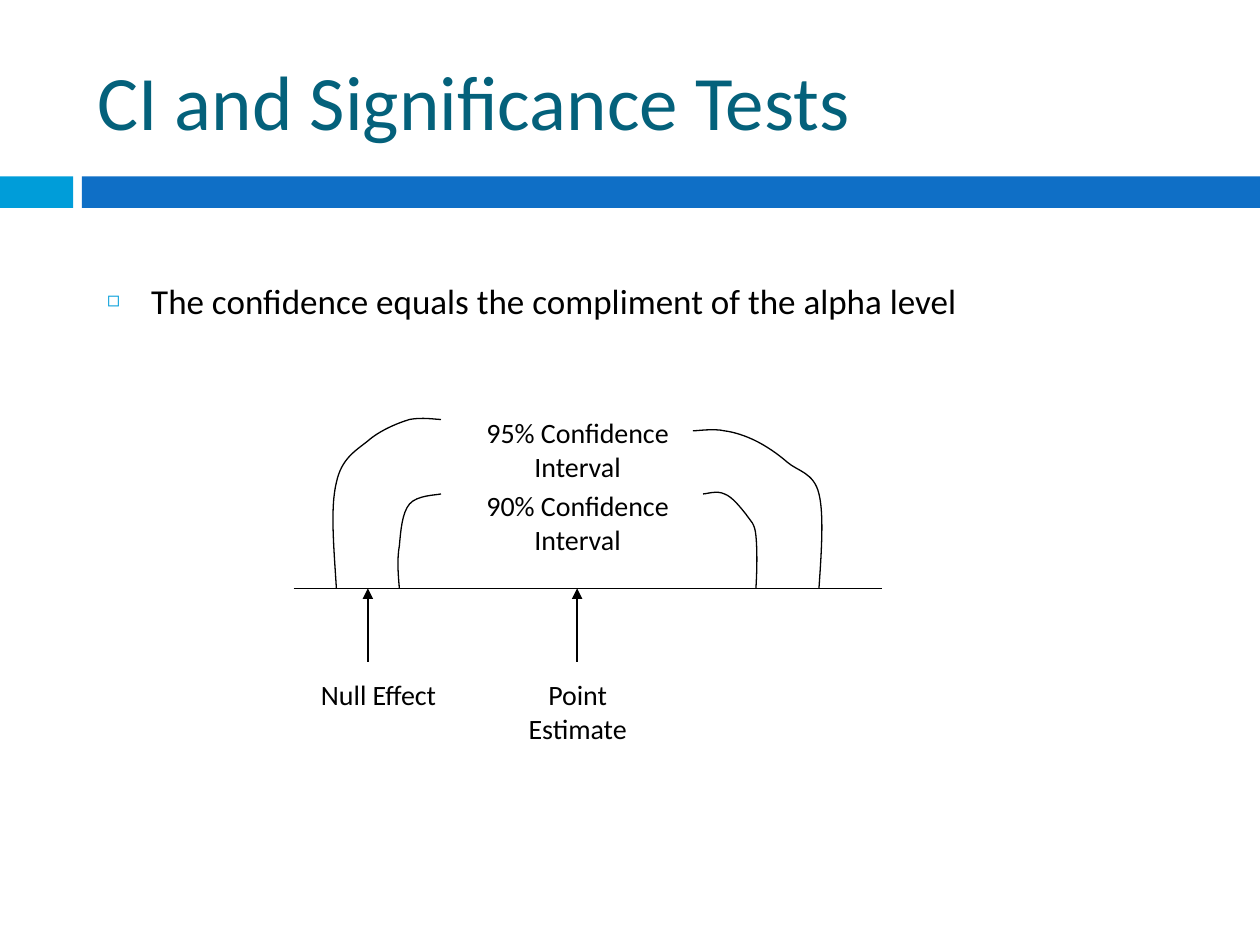
from lxml import etree
from pptx import Presentation
from pptx.dml.color import RGBColor
from pptx.enum.shapes import MSO_CONNECTOR, MSO_SHAPE
from pptx.enum.text import MSO_ANCHOR, PP_ALIGN
from pptx.oxml.ns import qn
from pptx.util import Inches, Pt

STRAIGHT = MSO_CONNECTOR.STRAIGHT
RECTANGLE = MSO_SHAPE.RECTANGLE
TOP, MIDDLE = MSO_ANCHOR.TOP, MSO_ANCHOR.MIDDLE
LEFT, CENTER = PP_ALIGN.LEFT, PP_ALIGN.CENTER

COLORS = {"title": "04617B", "ink": "000000", "accent": "009DD9", "band": "0F6FC6"}
FONT = "Calibri"

TITLE = "CI and Significance Tests"
STATEMENT = "The confidence equals the compliment of the alpha level"
BANDS = [(0, 0.58, "accent"), (0.65, 9.35, "band")]  # left, width, color
AXIS_Y, AXIS_LEFT, AXIS_RIGHT = 4.67, 2.33, 7
ARROW_START_Y = 5.25

# text, left, top, width, height
LABELS = [
    ("95% Confidence Interval", 3.5, 3.25, 2.17, 0.24),
    ("90% Confidence Interval", 3.5, 3.83, 2.17, 0.24),
    ("Null Effect", 2.42, 5.33, 1.17, 0.17),
    ("Point Estimate", 4, 5.33, 1.17, 0.17),
]
MARKER_XS = [2.92, 4.58]  # null effect, point estimate

# Start on the axis, then two control points and an end point per curve
INTERVAL_ARMS = [
    [(2.67, AXIS_Y),
     (2.65, 4.35), (2.62, 4.03), (2.67, 3.83),
     (2.71, 3.64), (2.82, 3.58), (2.92, 3.5),
     (3.01, 3.42), (3.15, 3.36), (3.25, 3.33),
     (3.35, 3.31), (3.46, 3.33), (3.5, 3.33)],
    [(6.5, AXIS_Y),
     (6.52, 4.38), (6.54, 4.08), (6.5, 3.92),
     (6.46, 3.75), (6.33, 3.74), (6.25, 3.67),
     (6.17, 3.6), (6.08, 3.54), (6, 3.5),
     (5.92, 3.46), (5.83, 3.43), (5.75, 3.42),
     (5.67, 3.4), (5.53, 3.42), (5.5, 3.42)],
    [(3.17, AXIS_Y),
     (3.16, 4.56), (3.15, 4.44), (3.17, 4.33),
     (3.18, 4.22), (3.19, 4.07), (3.25, 4),
     (3.31, 3.93), (3.46, 3.93), (3.5, 3.92)],
    [(6, AXIS_Y),
     (6.01, 4.51), (6.01, 4.35), (6, 4.25),
     (5.99, 4.15), (5.96, 4.14), (5.92, 4.08),
     (5.88, 4.03), (5.81, 3.94), (5.75, 3.92),
     (5.69, 3.89), (5.61, 3.92), (5.58, 3.92)],
]


def color(name):
    return RGBColor.from_string(COLORS[name])


def place(shape, left, top, width, height):
    shape.left, shape.top = Inches(left), Inches(top)
    shape.width, shape.height = Inches(width), Inches(height)


def write(shape, text, size, ink="ink", align=LEFT, anchor=TOP, wrap=True):
    frame = shape.text_frame
    frame.word_wrap = wrap
    frame.vertical_anchor = anchor
    paragraph = frame.paragraphs[0]
    paragraph.alignment = align
    run = paragraph.add_run()
    run.text = text
    run.font.name, run.font.size = FONT, Pt(size)
    run.font.color.rgb = color(ink)
    return paragraph


def add_bullet(paragraph):
    paragraph.space_before = Pt(7)
    properties = paragraph.line_spacing = None
    properties = paragraph._p.get_or_add_pPr()
    properties.set("marL", str(Inches(0.35)))
    properties.set("indent", str(-Inches(0.35)))
    bullet_color = etree.SubElement(properties, qn("a:buClr"))
    etree.SubElement(bullet_color, qn("a:srgbClr"), val=COLORS["accent"])
    etree.SubElement(properties, qn("a:buSzPct"), val="60000")
    etree.SubElement(properties, qn("a:buChar"), char="◻")


def outline(shape):
    shape.line.color.rgb = color("ink")
    shape.line.width = Pt(0.75)


def add_line(shapes, start, end, arrow=False):
    line = shapes.add_connector(STRAIGHT, *map(Inches, start + end))
    outline(line)
    etree.SubElement(line.element.spPr, qn("a:effectLst"))
    if arrow:
        etree.SubElement(line.line._get_or_add_ln(), qn("a:tailEnd"), type="triangle")


def add_curve(shapes, points):
    """Draw the points as a freeform, then turn each three segments into a Bézier."""
    vertices = [(Inches(x), Inches(y)) for x, y in points]
    builder = shapes.build_freeform(*vertices[0])
    builder.add_line_segments(vertices[1:], close=False)
    curve = builder.convert_to_shape()
    curve.shadow.inherit = False
    curve.fill.background()
    outline(curve)
    segments = list(curve.element.iter(qn("a:lnTo")))
    for first in range(0, len(segments), 3):
        bezier = etree.Element(qn("a:cubicBezTo"))
        segments[first].addprevious(bezier)
        for segment in segments[first:first + 3]:
            bezier.append(segment[0])
            segment.getparent().remove(segment)


def main():
    deck = Presentation()
    deck.slide_width, deck.slide_height = Inches(10), Inches(7.5)
    slide = deck.slides.add_slide(deck.slide_layouts[1])
    shapes = slide.shapes

    title, body = slide.placeholders
    place(title, 0.67, 0.25, 8.92, 1.08)
    write(title, TITLE, 44, ink="title", anchor=MIDDLE)
    place(body, 0.75, 2.17, 8.5, 5)
    add_bullet(write(body, STATEMENT, 20))

    for left, width, fill in BANDS:
        band = shapes.add_shape(RECTANGLE, *map(Inches, (left, 1.4, width, 0.25)))
        band.shadow.inherit = False
        band.fill.solid()
        band.fill.fore_color.rgb = color(fill)
        band.line.fill.background()

    add_line(shapes, (AXIS_LEFT, AXIS_Y), (AXIS_RIGHT, AXIS_Y))
    for arm in INTERVAL_ARMS:
        add_curve(shapes, arm)
    for x in MARKER_XS:
        add_line(shapes, (x, ARROW_START_Y), (x, AXIS_Y), arrow=True)
    for text, *box in LABELS:
        label = shapes.add_textbox(*map(Inches, box))
        write(label, text, 16, align=CENTER, wrap=False)

    deck.save("out.pptx")


if __name__ == "__main__":
    main()
